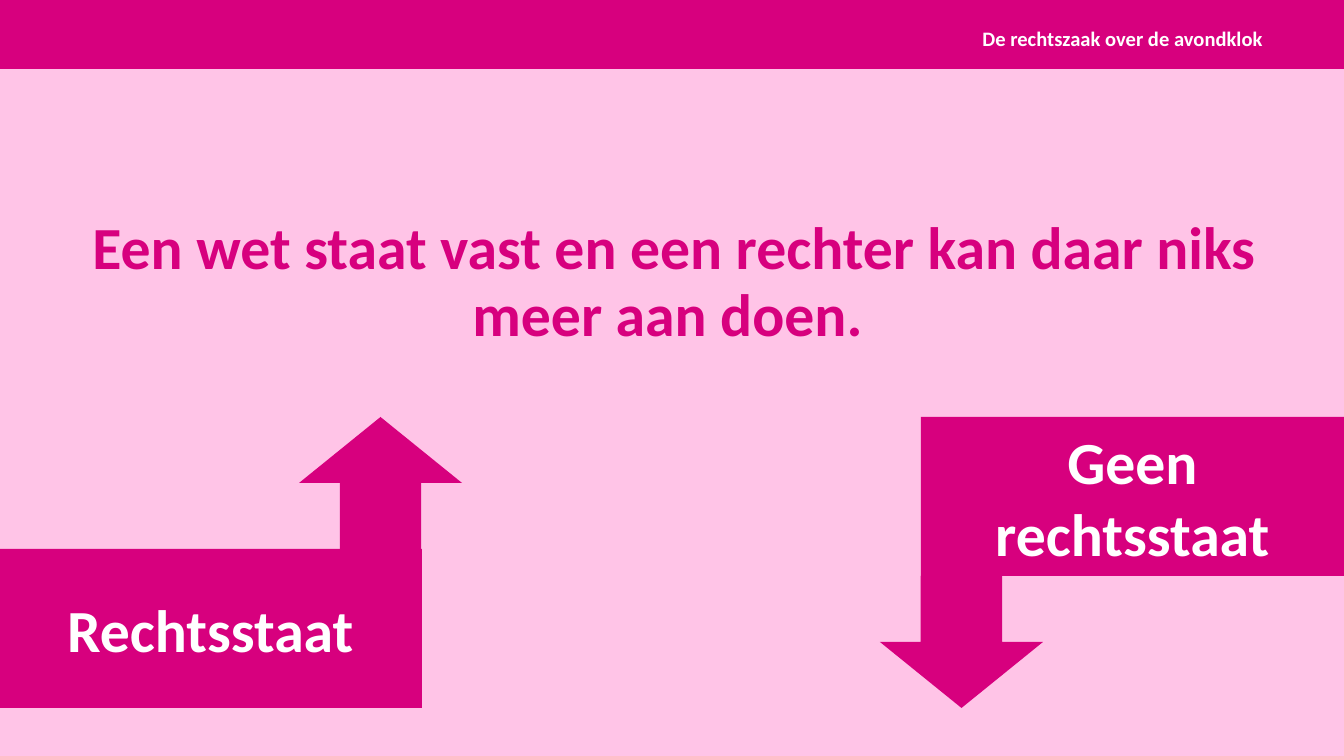
"""Build the curfew court case statement slide with its two answer blocks."""
import pptx
import pptx.dml.color
import pptx.enum.shapes
import pptx.enum.text
import pptx.util

MAGENTA = pptx.dml.color.RGBColor(0xD7, 0x00, 0x7E)
PINK = pptx.dml.color.RGBColor(0xFF, 0xC4, 0xE7)
WHITE = pptx.dml.color.RGBColor(0xFF, 0xFF, 0xFF)
SHAPE = pptx.enum.shapes.MSO_SHAPE
ALIGN = pptx.enum.text.PP_ALIGN
ANCHOR = pptx.enum.text.MSO_ANCHOR

SCALE = 914400 / 134.4
SLIDE_WIDTH, SLIDE_HEIGHT = 1344, 756
BLOCK_WIDTH, BLOCK_HEIGHT = 423, 159
ARROW_WIDTH, ARROW_HEIGHT = 163, 132
ANSWERS_TOP = 417

STATEMENT = "Een wet staat vast en een rechter kan daar niks meer aan doen. "
TOPIC = "De rechtszaak over de avondklok"
ANSWERS = [
    {"text": "Geen rechtsstaat", "left": 921, "block_top": ANSWERS_TOP,
     "arrow_left": 880, "arrow_top": ANSWERS_TOP + BLOCK_HEIGHT, "rotation": 180},
    {"text": "Rechtsstaat", "left": -1, "block_top": ANSWERS_TOP + ARROW_HEIGHT,
     "arrow_left": 299, "arrow_top": ANSWERS_TOP, "rotation": 0},
]


def px(*lengths):
    return [pptx.util.Emu(round(length * SCALE)) for length in lengths]


def add_solid(slide, preset, left, top, width, height):
    shape = slide.shapes.add_shape(preset, *px(left, top, width, height))
    shape.shadow.inherit = False
    shape.fill.solid()
    shape.fill.fore_color.rgb = MAGENTA
    shape.line.fill.background()
    return shape


def write(box, text, size, colour, align, anchor, margins=None):
    frame = box.text_frame
    settings = {"word_wrap": True, "vertical_anchor": anchor,
                "auto_size": pptx.enum.text.MSO_AUTO_SIZE.NONE, **(margins or {})}
    for name, value in settings.items():
        setattr(frame, name, value)
    para = frame.paragraphs[0]
    para.alignment = align
    span = para.add_run()
    span.text = text
    font = {"name": "Calibri", "size": pptx.util.Pt(size), "bold": True}
    for name, value in font.items():
        setattr(span.font, name, value)
    span.font.color.rgb = colour
    return para


def main():
    deck = pptx.Presentation()
    deck.slide_width, deck.slide_height = px(SLIDE_WIDTH, SLIDE_HEIGHT)
    slide = deck.slides.add_slide(deck.slide_layouts[5])
    slide.background.fill.solid()
    slide.background.fill.fore_color.rgb = PINK

    add_solid(slide, SHAPE.RECTANGLE, 0, 0, SLIDE_WIDTH, 69)

    no_margins = {f"margin_{side}": 0 for side in ("left", "top", "right", "bottom")}
    title = slide.shapes.title
    title.left, title.top, title.width, title.height = px(55, 207, 1239, 132)
    para = write(title, STATEMENT, 32, MAGENTA, ALIGN.CENTER, ANCHOR.TOP,
                 {**no_margins, "margin_top": px(7)[0]})
    para.line_spacing = pptx.util.Pt(36)
    para.space_before = pptx.util.Pt(0)

    topic = slide.shapes.add_textbox(*px(317, 15, 946, 46))
    write(topic, TOPIC, 11, WHITE, ALIGN.RIGHT, ANCHOR.MIDDLE, no_margins)

    for answer in ANSWERS:
        block = add_solid(slide, SHAPE.RECTANGLE, answer["left"], answer["block_top"],
                          BLOCK_WIDTH, BLOCK_HEIGHT)
        write(block, answer["text"], 32, WHITE, ALIGN.CENTER, ANCHOR.MIDDLE)
        arrow = add_solid(slide, SHAPE.UP_ARROW, answer["arrow_left"],
                          answer["arrow_top"], ARROW_WIDTH, ARROW_HEIGHT)
        arrow.rotation = answer["rotation"]

    deck.save("out.pptx")


if __name__ == "__main__":
    main()
